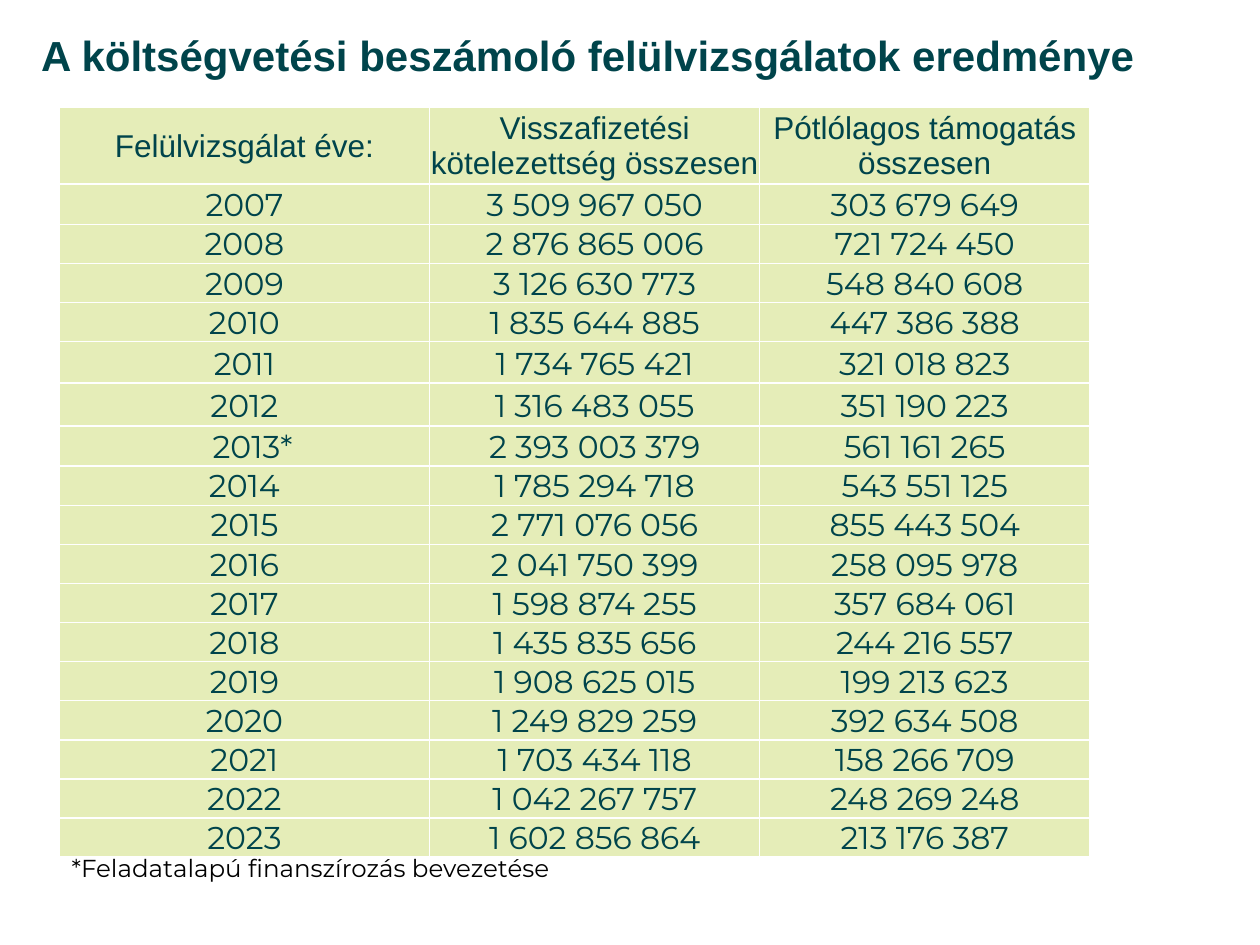
"""Builds a slide with a table of yearly budget report review results."""
from lxml.etree import SubElement
from pptx import Presentation
from pptx.dml.color import RGBColor
from pptx.enum.text import MSO_ANCHOR, MSO_AUTO_SIZE, PP_ALIGN
from pptx.oxml.ns import qn
from pptx.util import Inches, Pt

TEAL, LIME, WHITE, BLACK = "00444B", "C8D865", "FFFFFF", "000000"
TITLE = {"name": "Arial", "size": Pt(24), "bold": True}
HEAD = {"name": "Arial", "size": Pt(18), "bold": False}
BODY = {"name": "Montserrat", "size": Pt(18), "bold": False}
NOTE = {"name": "Montserrat", "size": Pt(14), "bold": False}


def tint(color, code):
    color.rgb = RGBColor.from_string(code)


def write(frame, text, style, code, align):
    para = frame.paragraphs[0]
    para.alignment = align
    run = para.add_run()
    run.text = text
    for key, value in style.items():
        setattr(run.font, key, value)
    tint(run.font.color, code)
    return para


deck = Presentation()
deck.slide_width, deck.slide_height = Inches(10), Inches(7.5)
slide = deck.slides.add_slide(deck.slide_layouts[6])

title = slide.shapes.add_textbox(Inches(0.18), Inches(0.23), Inches(8.97), Inches(0.46))
title.text_frame.word_wrap = False
title.text_frame.auto_size = MSO_AUTO_SIZE.SHAPE_TO_FIT_TEXT
para = write(title.text_frame, "A költségvetési beszámoló felülvizsgálatok eredménye",
             TITLE, TEAL, PP_ALIGN.CENTER)
para.line_spacing = 0.9

note = slide.shapes.add_textbox(Inches(0.47), Inches(6.72), Inches(4.7), Inches(0.34))
note.text_frame.word_wrap = True
note.text_frame.auto_size = MSO_AUTO_SIZE.SHAPE_TO_FIT_TEXT
write(note.text_frame, "*Feladatalapú finanszírozás bevezetése", NOTE, BLACK, PP_ALIGN.LEFT)

rows = [
    ("Felülvizsgálat éve:", "Visszafizetési kötelezettség összesen",
     "Pótlólagos támogatás összesen"),
    ("2007", "3 509 967 050", "303 679 649"),
    ("2008", "2 876 865 006", "721 724 450"),
    ("2009", "3 126 630 773", "548 840 608"),
    ("2010", "1 835 644 885", "447 386 388"),
    ("2011", "1 734 765 421", "321 018 823"),
    ("2012", "1 316 483 055", "351 190 223"),
    ("2013*", "2 393 003 379", "561 161 265"),
    ("2014", "1 785 294 718", "543 551 125"),
    ("2015", "2 771 076 056", "855 443 504"),
    ("2016", "2 041 750 399", "258 095 978"),
    ("2017", "1 598 874 255", "357 684 061"),
    ("2018", "1 435 835 656", "244 216 557"),
    ("2019", "1 908 625 015", "199 213 623"),
    ("2020", "1 249 829 259", "392 634 508"),
    ("2021", "1 703 434 118", "158 266 709"),
    ("2022", "1 042 267 757", "248 269 248"),
    ("2023", "1 602 856 864", "213 176 387"),
]
tall = {0: 0.6, 1: 0.32, 5: 0.33, 6: 0.34, 7: 0.32}

table = slide.shapes.add_table(len(rows), 3, Inches(0.47), Inches(0.85),
                               Inches(8.18), Inches(5.93)).table
for col, width in zip(table.columns, (2.94, 2.62, 2.62)):
    col.width = Inches(width)

for r, row in enumerate(rows):
    table.rows[r].height = Inches(tall.get(r, 0.31))
    for c, text in enumerate(row):
        cell = table.cell(r, c)
        left = 0.14 if text.endswith("*") else 0.01
        form = {"margin_left": Inches(left), "margin_right": Inches(0.01),
                "margin_top": Inches(0.01), "margin_bottom": 0,
                "vertical_anchor": MSO_ANCHOR.BOTTOM if r else MSO_ANCHOR.MIDDLE}
        for key, value in form.items():
            setattr(cell, key, value)
        write(cell.text_frame, text, BODY if r else HEAD, TEAL, PP_ALIGN.CENTER)
        props = cell._tc.get_or_add_tcPr()
        for side in ("a:lnL", "a:lnR", "a:lnT", "a:lnB"):
            line = SubElement(props, qn(side), w=str(Pt(1)))
            SubElement(SubElement(line, qn("a:solidFill")), qn("a:srgbClr"), val=WHITE)
        cell.fill.solid()
        tint(cell.fill.fore_color, LIME)
        shade = props.find(qn("a:solidFill")).find(qn("a:srgbClr"))
        SubElement(shade, qn("a:alpha"), val="46000")

deck.save("out.pptx")
